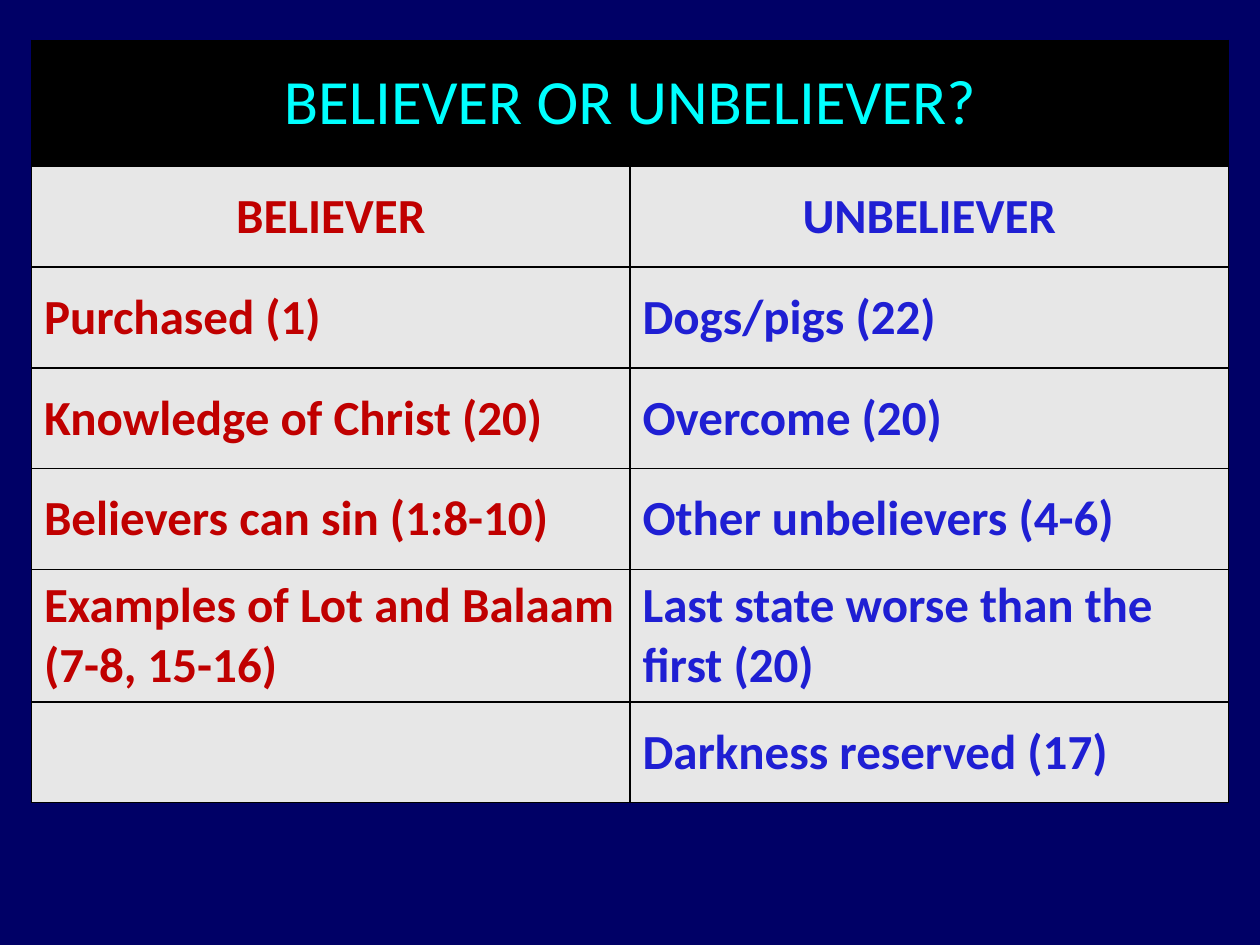
from lxml import etree
from pptx import Presentation
from pptx.dml.color import RGBColor
from pptx.enum.text import MSO_ANCHOR, PP_ALIGN
from pptx.oxml.ns import qn
from pptx.util import Inches, Pt

NAVY = RGBColor(0x00, 0x00, 0x66)
BLACK = RGBColor(0x00, 0x00, 0x00)
CYAN = RGBColor(0x00, 0xFF, 0xFF)
GREY = RGBColor(0xE7, 0xE7, 0xE7)
RED = RGBColor(0xC0, 0x00, 0x00)
BLUE = RGBColor(0x1F, 0x1F, 0xD3)

HEADING = "BELIEVER OR UNBELIEVER?"
ARGUMENTS = [
    ("BELIEVER", "UNBELIEVER"),
    ("Purchased (1)", "Dogs/pigs (22)"),
    ("Knowledge of Christ (20)", "Overcome (20)"),
    ("Believers can sin (1:8-10)", "Other unbelievers (4-6)"),
    ("Examples of Lot and Balaam (7-8, 15-16)",
     "Last state worse than the first (20)"),
    ("", "Darkness reserved (17)"),
]


def add_borders(cell):
    properties = cell._tc.get_or_add_tcPr()
    for position, side in enumerate(("lnL", "lnR", "lnT", "lnB")):
        border = etree.Element(qn(f"a:{side}"), w=str(Pt(1)))
        fill = etree.SubElement(border, qn("a:solidFill"))
        etree.SubElement(fill, qn("a:srgbClr"), val=str(BLACK))
        properties.insert(position, border)


def style_cell(cell, background):
    cell.fill.solid()
    cell.fill.fore_color.rgb = background
    cell.vertical_anchor = MSO_ANCHOR.MIDDLE
    add_borders(cell)


def write_cell(cell, wording, size, color, bold, align):
    paragraph = cell.text_frame.paragraphs[0]
    paragraph.alignment = align
    run = paragraph.add_run()
    run.text = wording
    run.font.name = "Calibri"
    run.font.size = Pt(size)
    run.font.bold = bold
    run.font.color.rgb = color


def add_comparison(slide, left, top, width, height):
    comparison = slide.shapes.add_table(
        len(ARGUMENTS) + 1, 2, left, top, width, height).table
    comparison.first_row = False
    comparison.horz_banding = False
    for row in comparison.rows:
        row.height = Inches(0.8)
    comparison.rows[0].height = Inches(1)

    heading = comparison.cell(0, 0)
    heading.merge(comparison.cell(0, 1))
    for column in range(2):
        style_cell(comparison.cell(0, column), BLACK)
    write_cell(heading, HEADING, 36, CYAN, False, PP_ALIGN.CENTER)

    for row, sides in enumerate(ARGUMENTS, start=1):
        align = PP_ALIGN.CENTER if row == 1 else PP_ALIGN.LEFT
        for column, (wording, color) in enumerate(zip(sides, (RED, BLUE))):
            cell = comparison.cell(row, column)
            style_cell(cell, GREY)
            if wording:
                write_cell(cell, wording, 28, color, True, align)


def main():
    deck = Presentation()
    deck.slide_width = Inches(10)
    deck.slide_height = Inches(7.5)
    slide = deck.slides.add_slide(deck.slide_layouts[6])
    slide.background.fill.solid()
    slide.background.fill.fore_color.rgb = NAVY
    add_comparison(slide, Inches(0.25), Inches(0.32), Inches(9.5), Inches(5.8))
    deck.save("out.pptx")


if __name__ == "__main__":
    main()
